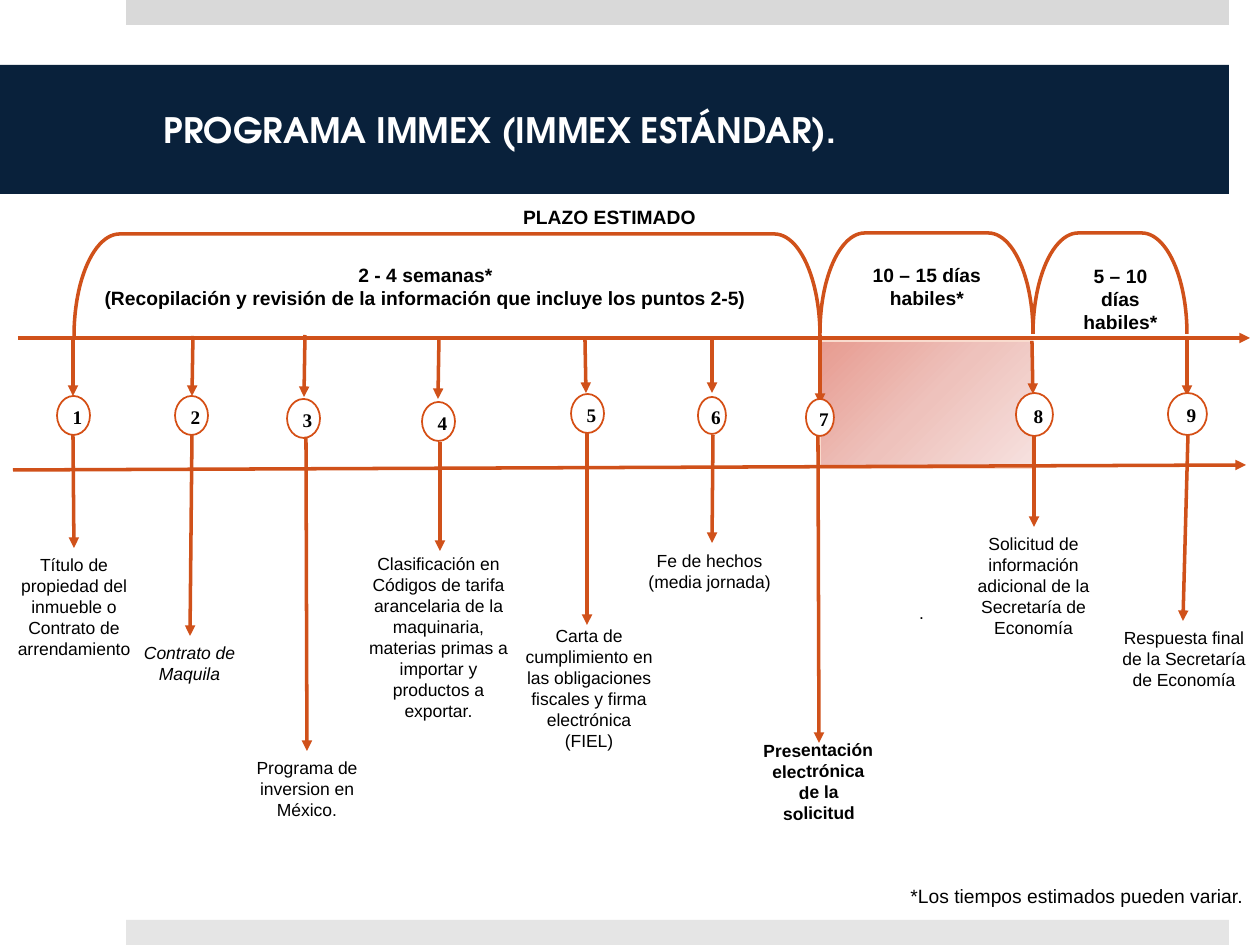
"""Build the IMMEX programme timeline slide."""
from copy import deepcopy

from pptx import Presentation
from pptx.dml.color import RGBColor
from pptx.enum.shapes import MSO_CONNECTOR, MSO_SHAPE as Shape
from pptx.enum.text import MSO_ANCHOR as Anchor, MSO_AUTO_SIZE as AutoSize, PP_ALIGN as Align
from pptx.oxml.ns import qn
from pptx.util import Pt
from lxml.etree import SubElement

PX = 914400 / 126
BLACK = RGBColor(0x00, 0x00, 0x00)
WHITE = RGBColor(0xFF, 0xFF, 0xFF)
NAVY = RGBColor(0x09, 0x21, 0x3B)
ORANGE = RGBColor(0xD0, 0x51, 0x1A)
RING = RGBColor(0xD5, 0x4F, 0x15)
TOP_GREY = RGBColor(0xD9, 0xD9, 0xD9)
BOTTOM_GREY = RGBColor(0xE5, 0xE5, 0xE5)
PEACH = RGBColor(0xF9, 0xDB, 0xCE)
REVIEW_STOPS = (RGBColor(0xE7, 0x9B, 0x90), RGBColor(0xEE, 0xC2, 0xBC), RGBColor(0xF6, 0xE1, 0xDF))

# Each step: circle box, upper arrow, lower arrow, label box, label lines, label style
STEPS = [
    ((57, 396, 33, 39), (73, 336, 73, 396), (73, 435, 74, 548), (-1, 548, 150, 118),
     ["Título de propiedad del inmueble o Contrato de arrendamiento"], {}),
    ((175, 396, 33, 39), (193, 336, 192, 396), (192, 435, 190, 636), (122, 636, 135, 77),
     ["Contrato de Maquila"], {"italic": True}),
    ((287, 399, 33, 39), (305, 335, 304, 397), (306, 437, 307, 751), (233, 751, 148, 77),
     ["Programa de inversion en México."], {}),
    ((422, 402, 33, 39), (439, 338, 438, 399), (440, 442, 440, 551), (349, 547, 179, 183),
     ["Clasificación en Códigos de tarifa arancelaria de la maquinaria, "
      "materias primas a importar y productos a exportar."], {}),
    ((571, 394, 33, 39), (585, 339, 586, 393), (587, 433, 587, 625), (509, 619, 160, 140),
     ["Carta de cumplimiento en las obligaciones fiscales y firma electrónica (FIEL)"], {}),
    ((698, 397, 28, 37), (712, 340, 712, 393), (713, 435, 712, 543), (622, 544, 175, 55),
     ["Fe de hechos", "(media jornada)"], {}),
    ((806, 399, 28, 37), (820, 335, 820, 404), (818, 436, 819, 743), (751, 733, 135, 97),
     ["Presentación electrónica de la solicitud"], {"bold": True, "rotation": 359.2}),
    ((1016, 393, 37, 43), (1032, 341, 1033, 394), (1034, 436, 1034, 527), (946, 527, 175, 118),
     ["Solicitud de información adicional de la Secretaría de Economía"], {}),
    ((1168, 393, 39, 42), (1187, 339, 1187, 396), (1188, 435, 1183, 621), (1110, 621, 148, 77),
     ["Respuesta final de la Secretaría de Economía"], {}),
]
PERIODS = [
    ((74, 234, 746, 102), (87, 257, 677, 59),
     ["2 - 4 semanas*", "(Recopilación y revisión de la información que incluye los puntos 2-5)"]),
    ((820, 233, 213, 100), (833, 257, 188, 59), ["10 – 15 días habiles*"]),
    ((1033, 233, 154, 101), (1060, 258, 121, 83), ["5 – 10 días habiles*"]),
]
AXES = [(18, 338, 1250, 338), (13, 470, 1246, 465)]


def emu(*lengths):
    """Turn px lengths into EMU."""
    return [round(length * PX) for length in lengths]


def add_block(slide, kind, box, fill=None, line=None, width=1):
    """Add a preset shape with an optional fill and outline."""
    shape = slide.shapes.add_shape(kind, *emu(*box))
    shape.shadow.inherit = False
    if fill is None:
        shape.fill.background()
    else:
        shape.fill.solid()
        shape.fill.fore_color.rgb = fill
    if line is None:
        shape.line.fill.background()
    else:
        shape.line.color.rgb = line
        shape.line.width = Pt(width)
    return shape


def write(frame, lines, size, name="Arial", color=BLACK, bold=False, italic=False, align=Align.CENTER):
    """Fill a text frame with one paragraph per line."""
    for index, text in enumerate(lines):
        paragraph = frame.add_paragraph() if index else frame.paragraphs[0]
        paragraph.text = text
        paragraph.alignment = align
        font = paragraph.font
        font.name, font.size, font.bold, font.italic = name, Pt(size), bold, italic
        font.color.rgb = color


def add_text(slide, box, lines, size, rotation=0, **style):
    """Add a wrapping text box that grows with its text."""
    text_box = slide.shapes.add_textbox(*emu(*box))
    text_box.rotation = rotation
    frame = text_box.text_frame
    frame.word_wrap = True
    frame.auto_size = AutoSize.SHAPE_TO_FIT_TEXT
    write(frame, lines, size, **style)


def add_arrow(slide, ends):
    """Add an orange straight arrow."""
    arrow = slide.shapes.add_connector(MSO_CONNECTOR.STRAIGHT, *emu(*ends))
    arrow.line.color.rgb = ORANGE
    arrow.line.width = Pt(2)
    SubElement(arrow.line._get_or_add_ln(), qn("a:tailEnd"), type="triangle")
    SubElement(arrow._element.spPr, qn("a:effectLst"))


def add_circle(slide, box, number):
    """Add a numbered step circle."""
    circle = add_block(slide, Shape.OVAL, box, WHITE, RING)
    frame = circle.text_frame
    frame.word_wrap = False
    frame.vertical_anchor = Anchor.MIDDLE
    frame.margin_left, frame.margin_right, frame.margin_top, frame.margin_bottom = emu(8, 0, 2, 0)
    write(frame, [str(number)], 11, name="Times New Roman", bold=True)


def add_bracket(slide, box):
    """Add a bracket that opens downward over the given area."""
    left, top, width, height = box
    shift = (width - height) / 2
    turned = (left + shift, top - shift, height, width)
    bracket = add_block(slide, Shape.LEFT_BRACKET, turned, line=ORANGE, width=2)
    bracket.adjustments[0] = 0.448
    bracket.rotation = 90


def add_review_area(slide, box):
    """Add the area with a three-stop diagonal gradient."""
    area = add_block(slide, Shape.RECTANGLE, box, line=PEACH)
    area.fill.gradient()
    area.fill.gradient_angle = 315
    stop_list = area._element.spPr.find(".//" + qn("a:gsLst"))
    stop_list.insert(1, deepcopy(stop_list[0]))
    for index, color in enumerate(REVIEW_STOPS):
        stop = area.fill.gradient_stops[index]
        stop.color.rgb = color
        stop.position = index / 2


def add_title(slide):
    """Add the navy title band."""
    band = add_block(slide, Shape.RECTANGLE, (0, 65, 1229, 129), NAVY)
    frame = band.text_frame
    frame.word_wrap = True
    frame.vertical_anchor = Anchor.MIDDLE
    frame.margin_left, frame.margin_right = emu(164, 38)
    write(frame, ["PROGRAMA IMMEX (IMMEX ESTÁNDAR)."], 20, name="TeX Gyre Adventor",
          color=WHITE, bold=True, align=Align.LEFT)


def main():
    """Build and save the slide."""
    presentation = Presentation()
    presentation.slide_width, presentation.slide_height = emu(1260, 945)
    slide = presentation.slides.add_slide(presentation.slide_layouts[6])
    add_block(slide, Shape.RECTANGLE, (126, 0, 1103, 25), TOP_GREY)
    add_block(slide, Shape.RECTANGLE, (126, 920, 1103, 25), BOTTOM_GREY)
    add_review_area(slide, (820, 341, 212, 127))
    add_title(slide)
    for axis in AXES:
        add_arrow(slide, axis)
    add_text(slide, (290, 199, 639, 37), ["PLAZO ESTIMADO"], 11, bold=True)
    for bracket, box, lines in PERIODS:
        add_bracket(slide, bracket)
        add_text(slide, box, lines, 11, bold=True)
    for number, (circle, upper, lower, box, lines, style) in enumerate(STEPS, 1):
        add_arrow(slide, upper)
        add_circle(slide, circle, number)
        add_arrow(slide, lower)
        add_text(slide, box, lines, 10, **style)
    add_text(slide, (842, 596, 159, 34), ["."], 10)
    add_text(slide, (898, 878, 384, 37), ["*Los tiempos estimados pueden variar."], 11, align=Align.LEFT)
    presentation.save("out.pptx")


if __name__ == "__main__":
    main()
